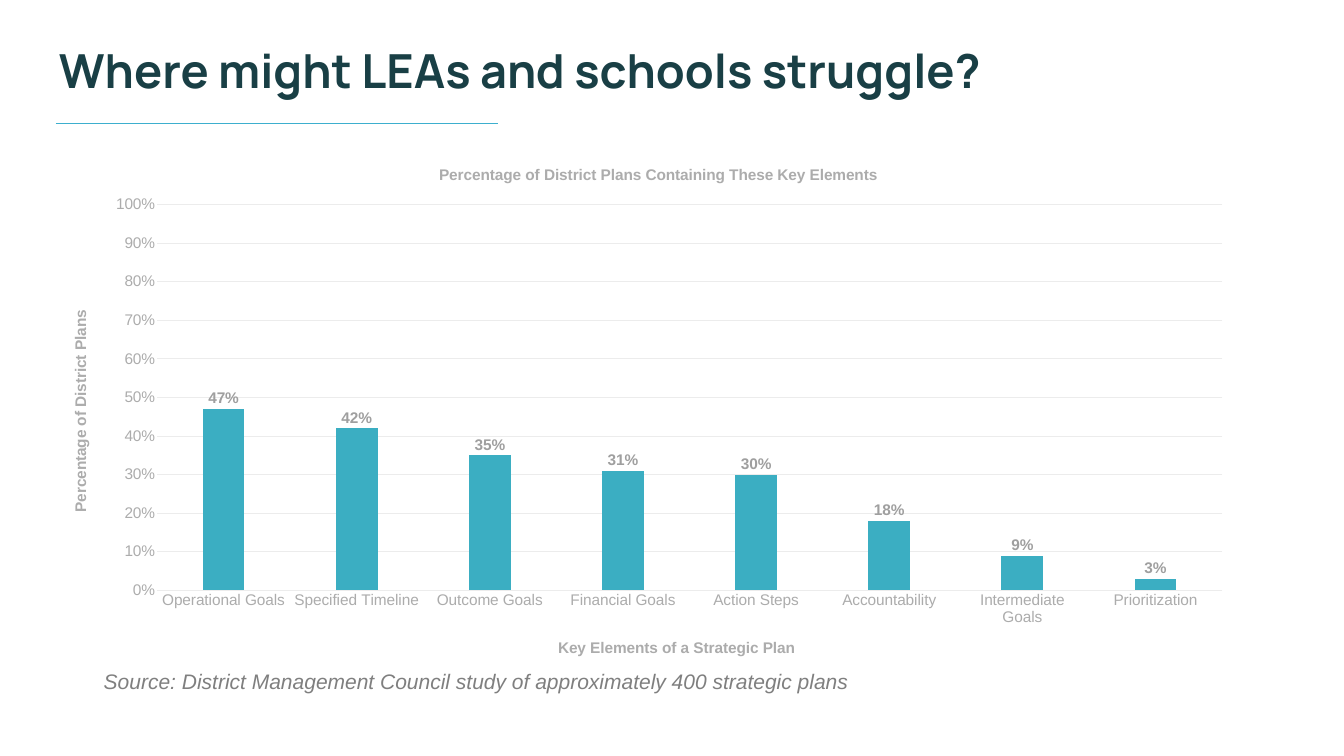
from dataclasses import dataclass

import pptx
import pptx.chart.data
import pptx.dml.color
import pptx.enum.chart
import pptx.enum.shapes
import pptx.enum.text
import pptx.oxml
import pptx.oxml.ns
import pptx.util
from pptx.util import Inches


@dataclass(frozen=True)
class Theme:
    heading_font: str = "Manrope"
    body_font: str = "Arial"
    heading: str = "193F45"
    rule: str = "3DAFCE"
    bar: str = "3BAEC2"
    axis: str = "ACACAC"
    grid: str = "ECECEC"
    value: str = "9F9F9F"
    source: str = "7F7F7F"
    heading_size: int = 67
    chart_size: int = 22
    source_size: int = 30


THEME = Theme()
PLAN_ELEMENTS = {
    "Operational Goals": 0.47,
    "Specified Timeline": 0.42,
    "Outcome Goals": 0.35,
    "Financial Goals": 0.31,
    "Action Steps": 0.3,
    "Accountability": 0.18,
    "Intermediate Goals": 0.09,
    "Prioritization": 0.03,
}


def rgb(color):
    return pptx.dml.color.RGBColor.from_string(color)


def format_font(font, size, color, name=THEME.body_font, bold=False, italic=False):
    font.name = name
    font.size = pptx.util.Pt(size)
    font.bold = bold
    font.italic = italic
    font.color.rgb = rgb(color)


def write_text(tf, text, **font_format):
    p = tf.paragraphs[0]
    r = p.add_run()
    r.text = text
    format_font(r.font, **font_format)
    return p


def set_line(line, color, width):
    line.color.rgb = rgb(color)
    line.width = pptx.util.Pt(width)


def make_layout(x, y, w=None, h=None):
    """Return a manual chart layout in fractions of the chart; a size means the inner plot."""
    parts = [("xMode", "edge"), ("yMode", "edge"), ("x", x), ("y", y)]
    if w is not None:
        parts = [("layoutTarget", "inner")] + parts + [("w", w), ("h", h)]
    body = "".join(f'<c:{tag} val="{val}"/>' for tag, val in parts)
    return pptx.oxml.parse_xml(
        f'<c:layout {pptx.oxml.ns.nsdecls("c")}>'
        f"<c:manualLayout>{body}</c:manualLayout></c:layout>")


def clear_layout(element):
    for layout in element.findall(pptx.oxml.ns.qn("c:layout")):
        element.remove(layout)


def add_chart_heading(title, text, x, y):
    write_text(title.text_frame, text, size=THEME.chart_size, color=THEME.axis, bold=True)
    element = title._element
    clear_layout(element)
    element.find(pptx.oxml.ns.qn("c:tx")).addnext(make_layout(x, y))


def add_heading(slide, text, left, top, width, height):
    sp = slide.shapes.title
    sp.left, sp.top, sp.width, sp.height = left, top, width, height
    tf = sp.text_frame
    tf.word_wrap = True
    tf.auto_size = pptx.enum.text.MSO_AUTO_SIZE.NONE
    tf.vertical_anchor = pptx.enum.text.MSO_ANCHOR.MIDDLE
    tf.margin_left = tf.margin_right = Inches(0.24)
    tf.margin_top = tf.margin_bottom = Inches(0.12)
    p = write_text(tf, text, size=THEME.heading_size, color=THEME.heading,
                   name=THEME.heading_font, bold=True)
    p.alignment = pptx.enum.text.PP_ALIGN.LEFT
    p.line_spacing = 0.9


def add_rule(slide, left, top, width):
    rule = slide.shapes.add_connector(
        pptx.enum.shapes.MSO_CONNECTOR.STRAIGHT, left, top, left + width, top)
    set_line(rule.line, THEME.rule, 1)
    rule._element.spPr.append(
        pptx.oxml.parse_xml(f'<a:effectLst {pptx.oxml.ns.nsdecls("a")}/>'))


def format_axes(chart):
    cat, val = chart.category_axis, chart.value_axis
    for axis in (cat, val):
        axis.major_tick_mark = axis.minor_tick_mark = pptx.enum.chart.XL_TICK_MARK.NONE
        format_font(axis.tick_labels.font, THEME.chart_size, THEME.axis)
    set_line(cat.format.line, THEME.grid, 0.75)
    val.format.line.fill.background()
    val.minimum_scale, val.maximum_scale, val.major_unit = 0, 1, 0.1
    val.tick_labels.number_format = "0%"
    val.tick_labels.number_format_is_linked = False
    val.has_major_gridlines = True
    set_line(val.major_gridlines.format.line, THEME.grid, 0.75)
    add_chart_heading(cat.axis_title, "Key Elements of a Strategic Plan", 0.42, 0.94)
    add_chart_heading(val.axis_title, "Percentage of District Plans", 0.01, 0.31)
    body = val.axis_title.text_frame._txBody.bodyPr
    body.set("rot", "-5400000")
    body.set("vert", "horz")


def format_bars(plot):
    plot.gap_width, plot.overlap = 219, -27
    plot.vary_by_categories = False
    fill = plot.series[0].format.fill
    fill.solid()
    fill.fore_color.rgb = rgb(THEME.bar)
    plot.has_data_labels = True
    labels = plot.data_labels
    labels.show_value = True
    labels.number_format = "0%"
    labels.number_format_is_linked = False
    labels.position = pptx.enum.chart.XL_LABEL_POSITION.OUTSIDE_END
    format_font(labels.font, THEME.chart_size, THEME.value, bold=True)


def add_plan_chart(slide, left, top, width, height):
    data = pptx.chart.data.CategoryChartData(number_format="0%")
    data.categories = list(PLAN_ELEMENTS)
    data.add_series("Series 1", list(PLAN_ELEMENTS.values()))
    chart = slide.shapes.add_chart(
        pptx.enum.chart.XL_CHART_TYPE.COLUMN_CLUSTERED,
        left, top, width, height, data).chart
    format_font(chart.font, 10, THEME.source)
    chart.has_legend = False
    chart.has_title = True
    add_chart_heading(chart.chart_title,
                      "Percentage of District Plans Containing These Key Elements", 0.32, 0.03)
    format_axes(chart)
    format_bars(chart.plots[0])
    plot_area = chart._chartSpace.chart.plotArea
    clear_layout(plot_area)
    plot_area.insert(0, make_layout(0.085, 0.112, 0.896, 0.742))


def add_source(slide, text, left, top, width, height):
    tf = slide.shapes.add_textbox(left, top, width, height).text_frame
    tf.word_wrap = True
    tf.auto_size = pptx.enum.text.MSO_AUTO_SIZE.SHAPE_TO_FIT_TEXT
    write_text(tf, text, size=THEME.source_size, color=THEME.source, italic=True)


def main():
    prs = pptx.Presentation()
    prs.slide_width, prs.slide_height = Inches(26.66), Inches(15)
    slide = prs.slides.add_slide(prs.slide_layouts.get_by_name("Title Only"))
    add_heading(slide, "Where might LEAs and schools struggle?",
                Inches(0.93), Inches(0), Inches(22.99), Inches(2.9))
    add_rule(slide, Inches(1.11), Inches(2.45), Inches(8.77))
    add_plan_chart(slide, Inches(1.11), Inches(2.9), Inches(23.58), Inches(10.32))
    add_source(slide,
               "Source: District Management Council study of approximately 400 strategic plans",
               Inches(1.96), Inches(13.22), Inches(20.67), Inches(0.61))
    prs.save("out.pptx")


if __name__ == "__main__":
    main()
